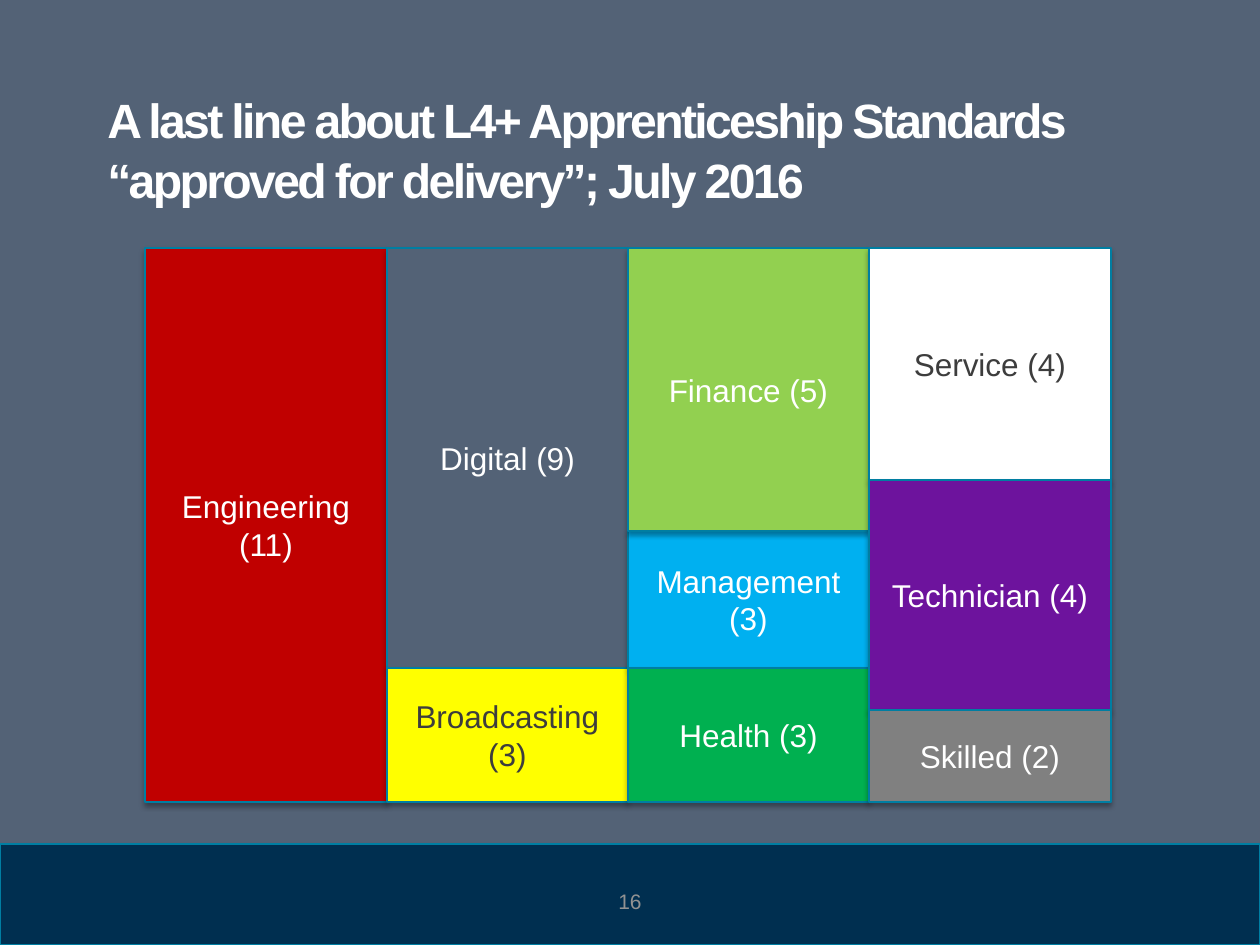
from lxml.etree import SubElement
from pptx import Presentation
from pptx.dml.color import RGBColor
from pptx.enum.shapes import MSO_SHAPE as Shape
from pptx.enum.text import MSO_ANCHOR as Anchor, PP_ALIGN as Align
from pptx.oxml.ns import qn
from pptx.util import Emu, Pt

PX_PER_INCH = 126
SLIDE_W, SLIDE_H = 1260, 945
BAR_TOP = 844

SLATE, NAVY, TEAL = "536276", "002F50", "007EA2"
WHITE, CHARCOAL, GREY = "FFFFFF", "3D3D3D", "929292"

# Treemap: column edges, and the heights where tiles meet
COLUMN_EDGES = [145, 387, 628, 869, 1111]
TOP, BOTTOM = 248, 802
LOWER_SPLIT = 668      # shared by the second and third columns
FINANCE_END, SERVICE_END, TECHNICIAN_END = 531, 480, 710

# Label, column, top, bottom, fill, text colour; back to front
TILES = [
    ("Engineering (11)", 0, TOP, BOTTOM, "C00000", WHITE),
    ("Digital (9)", 1, TOP, LOWER_SPLIT, SLATE, WHITE),
    ("Broadcasting (3)", 1, LOWER_SPLIT, BOTTOM, "FFFF00", CHARCOAL),
    ("Management (3)", 2, FINANCE_END, LOWER_SPLIT, "00B0F0", WHITE),
    ("Health (3)", 2, LOWER_SPLIT, BOTTOM, "00B050", WHITE),
    ("Finance (5)", 2, TOP, FINANCE_END, "92D050", WHITE),
    ("Service (4)", 3, TOP, SERVICE_END, WHITE, CHARCOAL),
    ("Technician (4)", 3, SERVICE_END, TECHNICIAN_END, "6D139D", WHITE),
    ("Skilled (2)", 3, TECHNICIAN_END, BOTTOM, "808080", WHITE),
]


def px(length):
    return Emu(round(length * 914400 / PX_PER_INCH))


def color(value):
    return RGBColor.from_string(value)


def add_shadow(shape):
    shape.shadow.inherit = False
    effects = shape._element.spPr.find(qn("a:effectLst"))
    shadow = SubElement(effects, qn("a:outerShdw"), blurRad=str(Pt(3.1)),
                        dist=str(Pt(1.8)), dir="5400000", rotWithShape="0")
    black = SubElement(shadow, qn("a:srgbClr"), val="000000")
    SubElement(black, qn("a:alpha"), val="35000")


def write(shape, text, size, ink, align=Align.CENTER, anchor=Anchor.MIDDLE):
    frame = shape.text_frame
    frame.word_wrap = True
    frame.vertical_anchor = anchor
    para = frame.paragraphs[0]
    para.alignment = align
    span = para.add_run()
    span.text = text
    span.font.name = "Arial"
    span.font.size = Pt(size)
    span.font.color.rgb = color(ink)
    return para, span


def add_panel(page, left, top, right, bottom, fill):
    panel = page.shapes.add_shape(Shape.RECTANGLE, px(left), px(top),
                                  px(right - left), px(bottom - top))
    panel.fill.solid()
    panel.fill.fore_color.rgb = color(fill)
    panel.line.color.rgb = color(TEAL)
    panel.line.width = Pt(0.75)
    add_shadow(panel)
    return panel


def add_tile(page, label, column, top, bottom, fill, ink):
    left, right = COLUMN_EDGES[column:column + 2]
    tile = add_panel(page, left, top, right, bottom, fill)
    write(tile, label, 18, ink)


def add_title(page, text):
    box = page.shapes.add_textbox(px(95), px(81), px(1071), px(165))
    para, span = write(box, text, 27.5, WHITE, Align.LEFT, Anchor.TOP)
    para.line_spacing = 1.05
    span.font.bold = True
    span._r.get_or_add_rPr().set("spc", "-150")


def main():
    deck = Presentation()
    deck.slide_width, deck.slide_height = px(SLIDE_W), px(SLIDE_H)
    page = deck.slides.add_slide(deck.slide_layouts[6])
    page.background.fill.solid()
    page.background.fill.fore_color.rgb = color(SLATE)

    # Footer bar and page number
    add_panel(page, 0, BAR_TOP, SLIDE_W, SLIDE_H, NAVY)
    number = page.shapes.add_textbox(px(483), px(876), px(294), px(50))
    write(number, "16", 12, GREY)

    # Treemap and title
    for tile in TILES:
        add_tile(page, *tile)
    add_title(page, "A last line about L4+ Apprenticeship Standards "
                    "“approved for delivery”; July 2016")

    deck.save("out.pptx")


if __name__ == "__main__":
    main()
